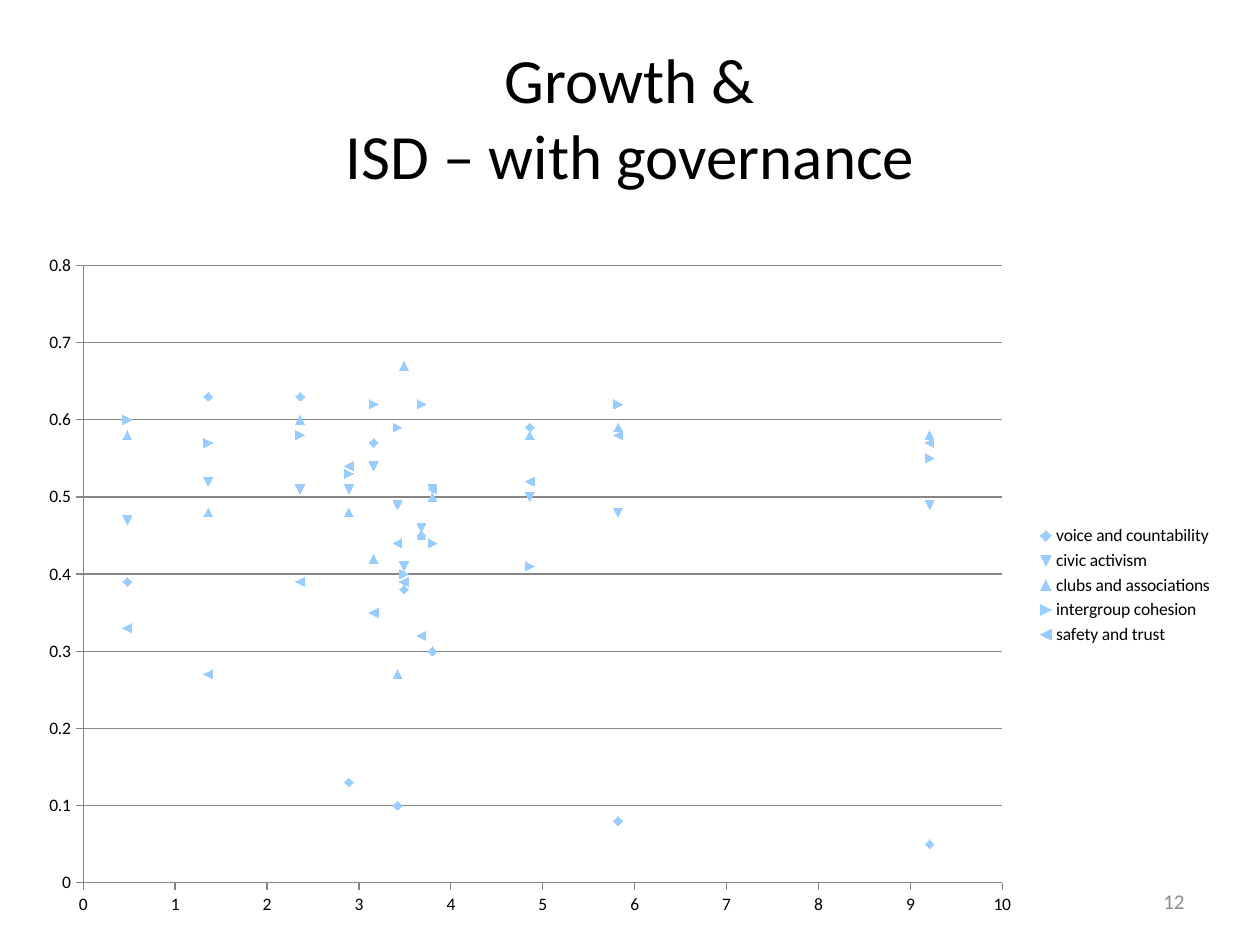
from dataclasses import dataclass

from pptx import Presentation
from pptx import util as u
from pptx.chart.data import XyChartData
from pptx.dml.color import RGBColor
from pptx.enum import chart as charts
from pptx.enum import text

PX = 9144


@dataclass(frozen=True)
class Theme:
    font: str = "Calibri"
    ink: str = "000000"
    muted: str = "8C8C8C"
    axis: str = "868686"
    title_pt: int = 36
    number_pt: int = 12
    chart_pt: int = 10


@dataclass(frozen=True)
class Box:
    left: int
    top: int
    width: int
    height: int

    def emu(self) -> tuple[int, ...]:
        return tuple(n * PX for n in (self.left, self.top, self.width, self.height))


@dataclass(frozen=True)
class Label:
    box: Box
    lines: tuple[str, ...]
    size: int
    color: str
    align: text.PP_ALIGN


@dataclass(frozen=True)
class Indicator:
    name: str
    scores: tuple[float, ...]


THEME = Theme()
CHART_BOX = Box(20, 192, 953, 545)

LABELS = (
    Label(Box(50, 30, 900, 125), ("Growth &", "ISD – with governance"),
          THEME.title_pt, THEME.ink, text.PP_ALIGN.CENTER),
    Label(Box(717, 695, 233, 40), ("12",),
          THEME.number_pt, THEME.muted, text.PP_ALIGN.RIGHT),
)

GROWTH = (3.16, 3.49, 1.36, 9.21, 2.89, 2.36, 4.86, 3.68, 3.8, 3.42, 5.82, 0.48)
INDICATORS = (
    Indicator("voice and countability",
              (0.57, 0.38, 0.63, 0.05, 0.13, 0.63, 0.59, 0.45, 0.3, 0.1, 0.08, 0.39)),
    Indicator("civic activism",
              (0.54, 0.41, 0.52, 0.49, 0.51, 0.51, 0.5, 0.46, 0.51, 0.49, 0.48, 0.47)),
    Indicator("clubs and associations",
              (0.42, 0.67, 0.48, 0.58, 0.48, 0.6, 0.58, 0.45, 0.5, 0.27, 0.59, 0.58)),
    Indicator("intergroup cohesion",
              (0.62, 0.4, 0.57, 0.55, 0.53, 0.58, 0.41, 0.62, 0.44, 0.59, 0.62, 0.6)),
    Indicator("safety and trust",
              (0.35, 0.39, 0.27, 0.57, 0.54, 0.39, 0.52, 0.32, 0.51, 0.44, 0.58, 0.33)),
)


def style_font(font, size: int, color: str) -> None:
    font.name = THEME.font
    font.size = u.Pt(size)
    font.color.rgb = RGBColor.from_string(color)


def style_line(line) -> None:
    line.color.rgb = RGBColor.from_string(THEME.axis)
    line.width = u.Pt(0.75)


def draw_label(slide, label: Label) -> None:
    frame = slide.shapes.add_textbox(*label.box.emu()).text_frame
    frame.word_wrap = True
    frame.vertical_anchor = text.MSO_ANCHOR.MIDDLE
    paragraph = frame.paragraphs[0]
    paragraph.alignment = label.align
    for index, line in enumerate(label.lines):
        if index:
            paragraph.add_line_break()
        run = paragraph.add_run()
        run.text = line
        style_font(run.font, label.size, label.color)


def style_axis(axis, top: float, step: float, grid: bool) -> None:
    axis.minimum_scale, axis.maximum_scale, axis.major_unit = 0, top, step
    axis.has_major_gridlines = grid
    axis.major_tick_mark = charts.XL_TICK_MARK.OUTSIDE
    axis.minor_tick_mark = charts.XL_TICK_MARK.NONE
    axis.tick_labels.number_format = "General"
    axis.tick_labels.number_format_is_linked = False
    style_line(axis.format.line)
    if grid:
        style_line(axis.major_gridlines.format.line)


def draw_scatter(slide, box: Box) -> None:
    data = XyChartData()
    for indicator in INDICATORS:
        series = data.add_series(indicator.name)
        for growth, score in zip(GROWTH, indicator.scores):
            series.add_data_point(growth, score)
    chart = slide.shapes.add_chart(
        charts.XL_CHART_TYPE.XY_SCATTER, *box.emu(), data).chart
    style_font(chart.font, THEME.chart_pt, THEME.ink)
    chart.has_title = False
    chart.has_legend = True
    chart.legend.position = charts.XL_LEGEND_POSITION.RIGHT
    chart.legend.include_in_layout = False
    chart.plots[0].vary_by_categories = False
    for series in chart.plots[0].series:
        series.smooth = False
        series.format.line.fill.background()
    style_axis(chart.category_axis, 10, 1, False)
    style_axis(chart.value_axis, 0.8, 0.1, True)


def main() -> None:
    deck = Presentation()
    deck.slide_width, deck.slide_height = 1000 * PX, 750 * PX
    slide = deck.slides.add_slide(deck.slide_layouts[6])
    for label in LABELS:
        draw_label(slide, label)
    draw_scatter(slide, CHART_BOX)
    deck.save("out.pptx")


if __name__ == "__main__":
    main()
